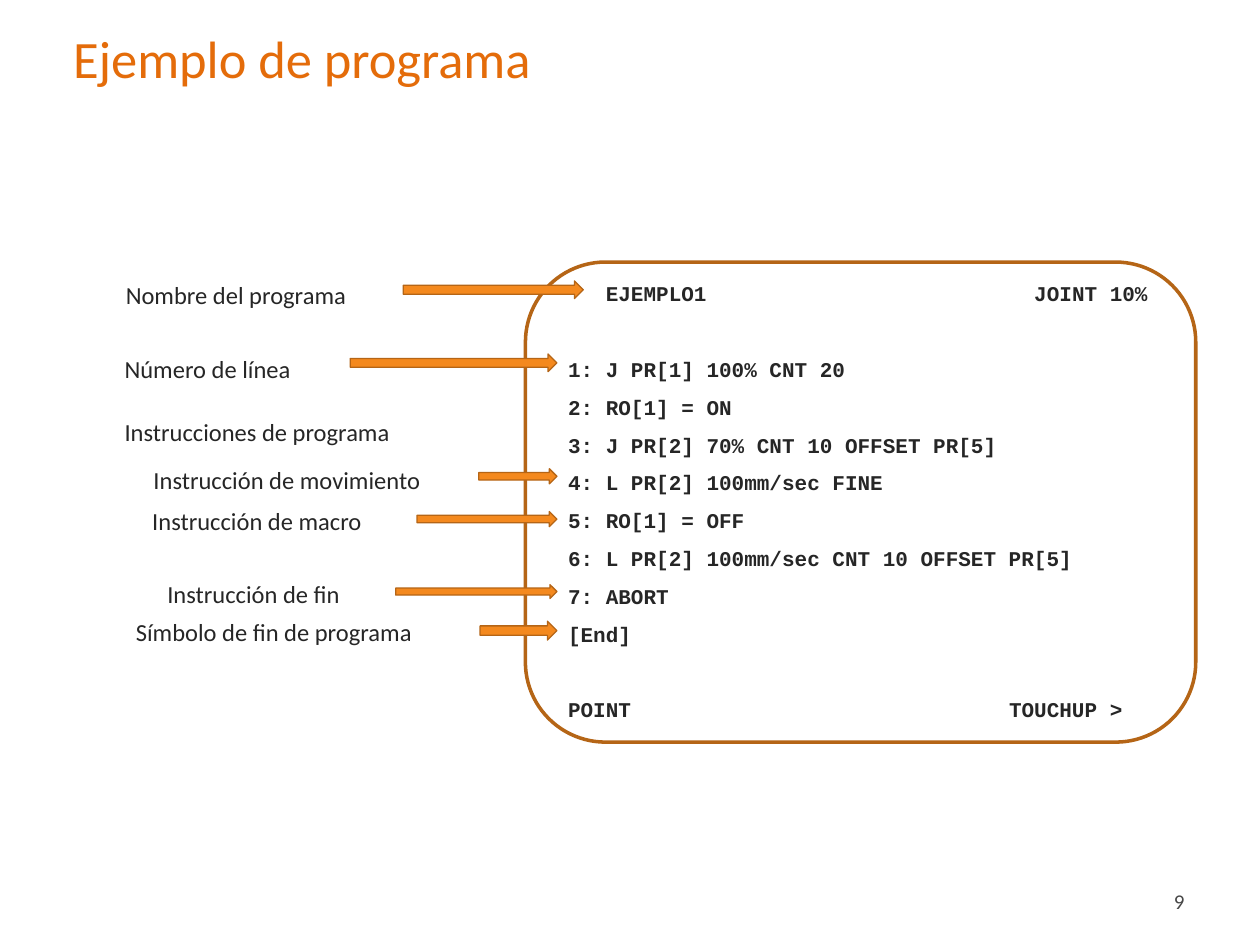
from pptx import Presentation
from pptx.dml.color import RGBColor
from pptx.enum.shapes import MSO_SHAPE as Form
from pptx.enum.text import MSO_ANCHOR as Anchor, PP_ALIGN as Align
from pptx.oxml.ns import qn
from pptx.util import Inches, Pt
from lxml.etree import SubElement

INK, EDGE, FILL = "262626", "B56516", "F4891E"
LABELS = [
    (0.9, 2.17, 2.3, "Nombre del programa"),
    (0.89, 2.76, 1.77, "Número de línea"),
    (0.89, 3.26, 2.75, "Instrucciones de programa"),
    (1.12, 3.64, 2.74, "Instrucción de movimiento"),
    (1.11, 3.97, 2.21, "Instrucción de macro"),
    (1.23, 4.55, 1.86, "Instrucción de fin"),
    (0.98, 4.85, 2.86, "Símbolo de fin de programa"),
]
ARROWS = [
    (3.2, 2.23, 1.43, 0.14),
    (2.78, 2.81, 1.64, 0.14),
    (3.8, 3.72, 0.62, 0.12),
    (3.31, 4.06, 1.11, 0.12),
    (3.14, 4.64, 1.28, 0.11),
    (3.81, 4.93, 0.61, 0.15),
]
GAP = {"space_before": Pt(21.6)}
CODE = [
    ("   EJEMPLO1\tJOINT 10%", {}, 3.7),
    ("1: J PR[1] 100% CNT 20", GAP, None),
    ("2: RO[1] = ON", {}, None),
    ("3: J PR[2] 70% CNT 10 OFFSET PR[5]", {}, None),
    ("4: L PR[2] 100mm/sec FINE", {}, None),
    ("5: RO[1] = OFF", {}, None),
    ("6: L PR[2] 100mm/sec CNT 10 OFFSET PR[5]", {}, None),
    ("7: ABORT", {}, None),
    ("[End]", {}, None),
    ("POINT\tTOUCHUP >", GAP, 3.5),
]


def color(code):
    """Turn a hex string into a colour."""
    return RGBColor.from_string(code)


def assign(item, values):
    """Set each named value on an item."""
    for name, value in values.items():
        setattr(item, name, value)


class Deck:
    """Hold the style and the current slide."""

    def __init__(self):
        """Start a deck with one title-only slide."""
        self.show = Presentation()
        assign(self.show, {"slide_width": Inches(10), "slide_height": Inches(7.5)})
        self.slide = self.show.slides.add_slide(self.show.slide_layouts[5])
        self.body = {"name": "Calibri", "size": Pt(14), "bold": False}
        self.mono = {"name": "Courier New", "size": Pt(12), "bold": True}

    def put(self, para, text, font, ink=INK, tab=None, **form):
        """Fill one paragraph with styled text."""
        assign(para, form)
        if tab:
            stops = SubElement(para._p.get_or_add_pPr(), qn("a:tabLst"))
            SubElement(stops, qn("a:tab"), pos=str(Inches(tab)), algn="l")
        run = para.add_run()
        run.text = text
        assign(run.font, font)
        run.font.color.rgb = color(ink)

    def title(self, text, *area):
        """Place and style the title."""
        shape = self.slide.shapes.title
        assign(shape, dict(zip(("left", "top", "width", "height"), map(Inches, area))))
        frame = shape.text_frame
        frame.vertical_anchor = Anchor.MIDDLE
        font = self.body | {"size": Pt(30)}
        self.put(frame.paragraphs[0], text, font, "E46C0A", alignment=Align.LEFT)

    def box(self, *area, anchor=Anchor.TOP):
        """Add a wrapping text box and return its frame."""
        frame = self.slide.shapes.add_textbox(*map(Inches, area)).text_frame
        assign(frame, {"word_wrap": True, "vertical_anchor": anchor})
        return frame

    def label(self, left, top, width, text):
        """Add a one-line label."""
        self.put(self.box(left, top, width, 0.34).paragraphs[0], text, self.body)

    def code(self, lines, *area):
        """Add the program listing."""
        frame = self.box(*area)
        for row, (text, form, tab) in enumerate(lines):
            para = frame.add_paragraph() if row else frame.paragraphs[0]
            self.put(para, text, self.mono, tab=tab, line_spacing=1.5, **form)

    def number(self, text, *area):
        """Add the page number."""
        para = self.box(*area, anchor=Anchor.MIDDLE).paragraphs[0]
        font = self.body | {"size": Pt(12)}
        self.put(para, text, font, "474747", alignment=Align.RIGHT)

    def shape(self, form, area, line, fill=None):
        """Add an outlined preset shape."""
        shape = self.slide.shapes.add_shape(form, *map(Inches, area))
        shape.shadow.inherit = False
        shape.line.color.rgb = color(EDGE)
        shape.line.width = Pt(line)
        if fill:
            shape.fill.solid()
            shape.fill.fore_color.rgb = color(fill)
        else:
            shape.fill.background()


def main():
    """Build the slide and save it."""
    deck = Deck()
    deck.title("Ejemplo de programa", 0.48, 0.08, 9.19, 0.75)
    deck.number("9", 7.17, 6.95, 2.33, 0.4)
    deck.code(CODE, 4.41, 2.08, 4.98, 4.04)
    for label in LABELS:
        deck.label(*label)
    deck.shape(Form.ROUNDED_RECTANGLE, (4.17, 2.08, 5.32, 3.81), 2)
    for area in ARROWS:
        deck.shape(Form.RIGHT_ARROW, area, 0.75, FILL)
    deck.show.save("out.pptx")


if __name__ == "__main__":
    main()
